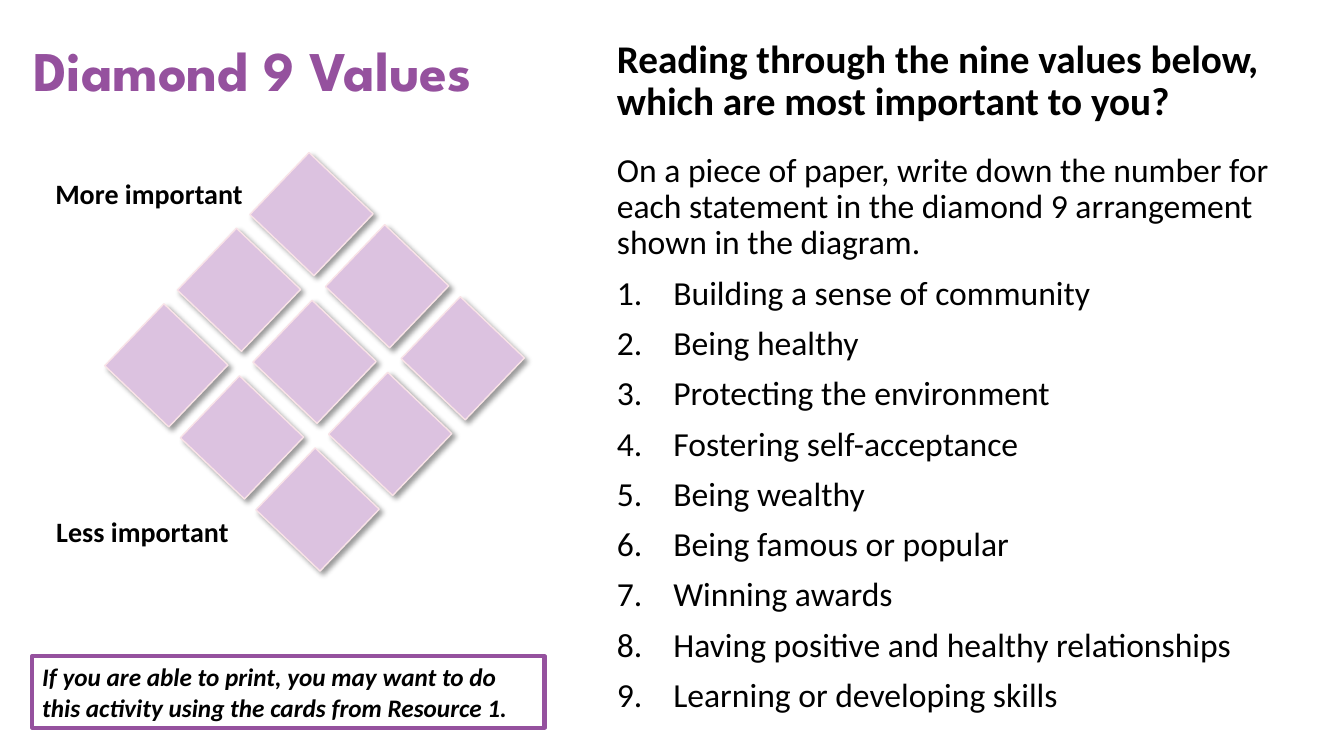
from dataclasses import dataclass
from itertools import product

from lxml import etree
from pptx import Presentation
from pptx.dml.color import RGBColor
from pptx.enum.shapes import MSO_SHAPE
from pptx.enum.text import MSO_ANCHOR, MSO_AUTO_SIZE, PP_ALIGN
from pptx.oxml.ns import qn
from pptx.util import Inches, Pt

RECTANGLE = MSO_SHAPE.RECTANGLE
FIT_SHAPE = MSO_AUTO_SIZE.SHAPE_TO_FIT_TEXT
TOP, MIDDLE = MSO_ANCHOR.TOP, MSO_ANCHOR.MIDDLE
LEFT = PP_ALIGN.LEFT


@dataclass(frozen=True)
class Theme:
    title_font: str = "League Spartan"
    body_font: str = "Calibri"
    purple: str = "95519E"
    lilac: str = "DCC2E0"
    pink: str = "F9E3E7"
    black: str = "000000"
    title: int = 40
    heading: int = 28
    body: int = 24
    label: int = 20
    note: int = 18


THEME = Theme()
VALUES = [
    "Building a sense of community",
    "Being healthy",
    "Protecting the environment",
    "Fostering self-acceptance",
    "Being wealthy",
    "Being famous or popular",
    "Winning awards",
    "Having positive and healthy relationships",
    "Learning or developing skills",
]


def color(value):
    return RGBColor.from_string(value)


def style(para, size, shade=THEME.black, name=THEME.body_font, bold=False, italic=False):
    for span in para.runs:
        font = span.font
        font.size, font.name = Pt(size), name
        font.bold, font.italic = bold, italic
        font.color.rgb = color(shade)


def add_text(page, box, text, size, wrap=True, **look):
    shape = page.shapes.add_textbox(*map(Inches, box))
    frame = shape.text_frame
    frame.text = text
    frame.word_wrap = wrap
    frame.auto_size = FIT_SHAPE
    style(frame.paragraphs[0], size, bold=True, **look)


def add_shadow(shape):
    """Soft shadow towards the lower right, whatever the rotation."""
    shape.shadow.inherit = False
    effects = shape._element.spPr.find(qn("a:effectLst"))
    shadow = etree.SubElement(
        effects, qn("a:outerShdw"), blurRad=str(Pt(4)), dist=str(Pt(3)),
        dir="2700000", algn="tl", rotWithShape="0")
    shade = etree.SubElement(shadow, qn("a:srgbClr"), val=THEME.black)
    etree.SubElement(shade, qn("a:alpha"), val="40000")


def number_paragraph(para):
    props = para._p.get_or_add_pPr()
    indent = Inches(0.56)
    props.set("marL", str(indent))
    props.set("indent", str(-indent))
    etree.SubElement(props, qn("a:buFont"), typeface=THEME.body_font)
    etree.SubElement(props, qn("a:buAutoNum"), type="arabicPeriod")


def add_diamond(page, left, top):
    """Nine rotated cards in three rows that run down to the left."""
    # Labels for the two ends of the scale
    add_text(page, (left - 0.77, top, 2.07, 0.44), "More important", THEME.label, wrap=False)
    add_text(page, (left - 0.76, top + 3.36, 1.93, 0.44), "Less important", THEME.label, wrap=False)
    # Cards
    cards = page.shapes.add_group_shape()
    for row, column in product(range(3), repeat=2):
        x = left + 1.43 + 0.75 * column - 0.72 * row
        y = top + 0.715 * column + 0.75 * row
        card = cards.shapes.add_shape(RECTANGLE, *map(Inches, (x, y, 0.88, 0.85)))
        card.rotation = 43.7
        card.fill.solid()
        card.fill.fore_color.rgb = color(THEME.lilac)
        card.line.color.rgb = color(THEME.pink)
        card.line.width = Pt(1)
        add_shadow(card)


def add_note(page, box, text):
    note = page.shapes.add_shape(RECTANGLE, *map(Inches, box))
    note.shadow.inherit = False
    note.fill.background()
    note.line.color.rgb = color(THEME.purple)
    note.line.width = Pt(3)
    frame = note.text_frame
    frame.text = text
    frame.word_wrap = True
    frame.auto_size = FIT_SHAPE
    frame.vertical_anchor = MIDDLE
    frame.paragraphs[0].alignment = LEFT
    style(frame.paragraphs[0], THEME.note, bold=True, italic=True)


def add_task(page, box):
    """Question, instruction and the numbered values."""
    frame = page.shapes.add_textbox(*map(Inches, box)).text_frame
    frame.word_wrap = True
    frame.vertical_anchor = TOP
    heading = frame.paragraphs[0]
    heading.text = "Reading through the nine values below, which are most important to you?"
    heading.line_spacing = 0.9
    style(heading, THEME.heading, bold=True)

    instruction = frame.add_paragraph()
    instruction.text = ("On a piece of paper, write down the number for each statement "
                        "in the diamond 9 arrangement shown in the diagram.")
    instruction.line_spacing = 0.9
    instruction.space_before = Pt(21)
    style(instruction, THEME.body)

    for value in VALUES:
        item = frame.add_paragraph()
        item.text = value
        item.line_spacing = 0.9
        item.space_before = Pt(10)
        number_paragraph(item)
        style(item, THEME.body)


def main():
    deck = Presentation()
    deck.slide_width, deck.slide_height = Inches(13.33), Inches(7.5)
    page = deck.slides.add_slide(deck.slide_layouts[6])
    add_text(page, (0.23, 0.3, 5.43, 0.77), "Diamond 9 Values", THEME.title,
             shade=THEME.purple, name=THEME.title_font)
    add_diamond(page, 1.22, 1.7)
    add_note(page, (0.32, 6.51, 5.08, 0.71),
             "If you are able to print, you may want to do this activity "
             "using the cards from Resource 1.")
    add_task(page, (6.02, 0.34, 7.25, 7.16))
    deck.save("out.pptx")


if __name__ == "__main__":
    main()
